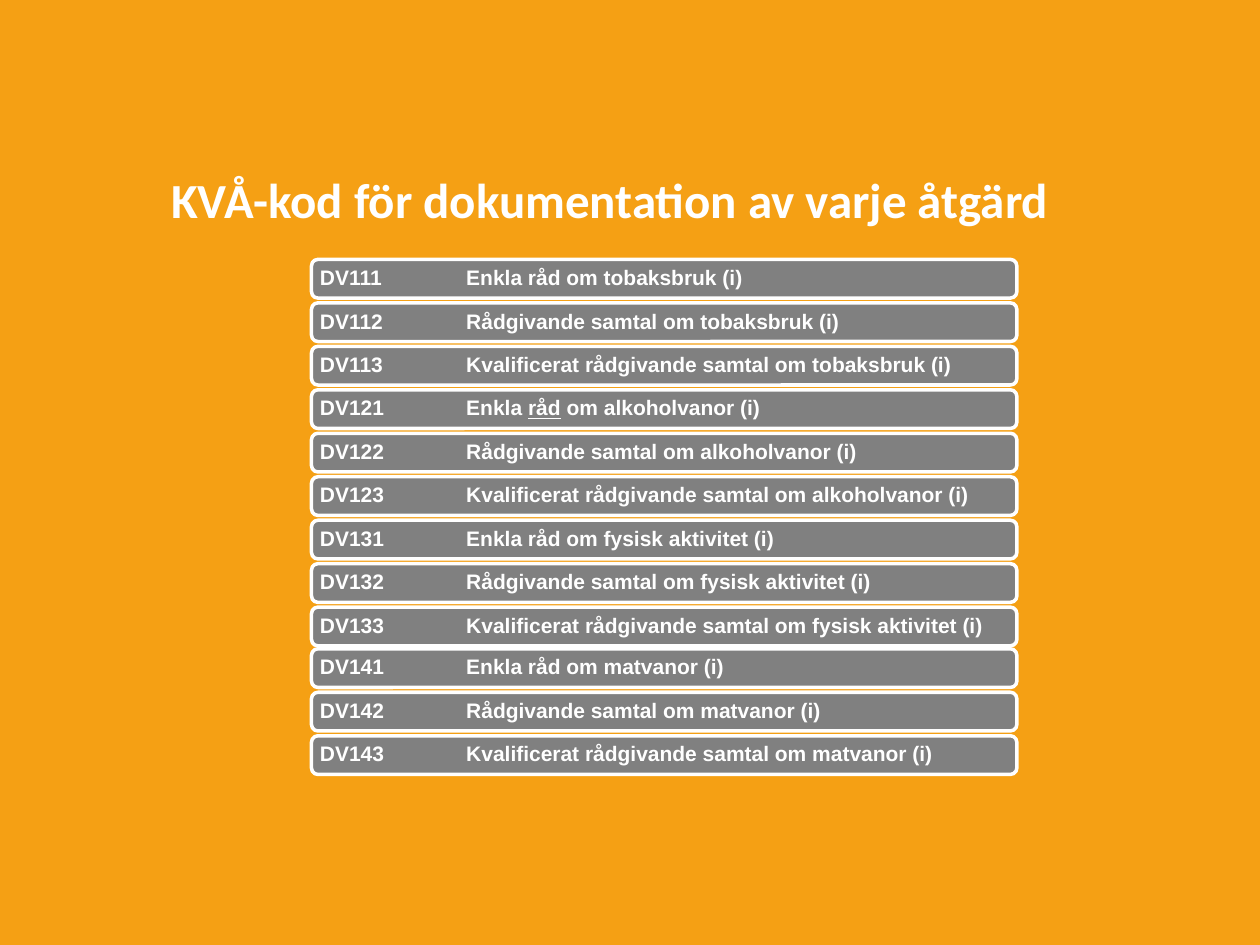
from dataclasses import dataclass

from lxml import etree
from pptx import Presentation
from pptx.dml.color import RGBColor
from pptx.enum.shapes import MSO_SHAPE
from pptx.enum.text import MSO_ANCHOR
from pptx.oxml.ns import qn
from pptx.util import Cm, Pt

ROUNDED = MSO_SHAPE.ROUNDED_RECTANGLE
MIDDLE = MSO_ANCHOR.MIDDLE

ORANGE, GREY, WHITE = "F5A014", "808080", "FFFFFF"

# Bar geometry in centimetres
BAR_LEFT, BAR_WIDTH, BAR_HEIGHT = 6.28, 14.22, 0.78
BAR_INSET = 0.04
TEXT_MARGIN = 0.13
TEXT_TAB = 2.95
FIRST_TOP, FOOD_TOP = 5.23, 13.08
BAR_PITCH = 7.01 / 8


@dataclass(frozen=True)
class Measure:
    code: str
    label: str
    underlined: str = ""


MEASURES = [
    Measure("DV111", "Enkla råd om tobaksbruk (i)"),
    Measure("DV112", "Rådgivande samtal om tobaksbruk (i)"),
    Measure("DV113", "Kvalificerat rådgivande samtal om tobaksbruk (i)"),
    Measure("DV121", "Enkla råd om alkoholvanor (i)", "råd"),
    Measure("DV122", "Rådgivande samtal om alkoholvanor (i)"),
    Measure("DV123", "Kvalificerat rådgivande samtal om alkoholvanor (i)"),
    Measure("DV131", "Enkla råd om fysisk aktivitet (i)"),
    Measure("DV132", "Rådgivande samtal om fysisk aktivitet (i)"),
    Measure("DV133", "Kvalificerat rådgivande samtal om fysisk aktivitet (i)"),
]
FOOD_MEASURES = [
    Measure("DV141", "Enkla råd om matvanor (i)"),
    Measure("DV142", "Rådgivande samtal om matvanor (i)"),
    Measure("DV143", "Kvalificerat rådgivande samtal om matvanor (i)"),
]


def paint(color_format, color: str) -> None:
    color_format.rgb = RGBColor.from_string(color)


def set_font(paragraph, name: str, size: int) -> None:
    paragraph.font.name = name
    paragraph.font.size = Pt(size)
    paragraph.font.bold = True
    paint(paragraph.font.color, WHITE)


def add_tab_stop(paragraph, position: float) -> None:
    tabs = etree.SubElement(paragraph._p.get_or_add_pPr(), qn("a:tabLst"))
    etree.SubElement(tabs, qn("a:tab"), pos=str(Cm(position)), algn="l")


def add_title(page, text: str) -> None:
    box = page.shapes.add_textbox(Cm(3.2), Cm(3.3), Cm(20.37), Cm(1.37))
    box.text_frame.word_wrap = True
    paragraph = box.text_frame.paragraphs[0]
    paragraph.text = text
    set_font(paragraph, "Calibri", 28)


def add_bar(group, measure: Measure, top: float) -> None:
    # Rounded background
    bar = group.shapes.add_shape(
        ROUNDED, Cm(BAR_LEFT), Cm(top), Cm(BAR_WIDTH), Cm(BAR_HEIGHT))
    bar.shadow.inherit = False
    bar.fill.solid()
    paint(bar.fill.fore_color, GREY)
    paint(bar.line.color, WHITE)
    bar.line.width = Pt(2)

    # Code and label
    box = group.shapes.add_textbox(
        Cm(BAR_LEFT + BAR_INSET), Cm(top + BAR_INSET),
        Cm(BAR_WIDTH - 2 * BAR_INSET), Cm(BAR_HEIGHT - 2 * BAR_INSET))
    frame = box.text_frame
    frame.word_wrap = True
    frame.vertical_anchor = MIDDLE
    frame.margin_left = frame.margin_right = Cm(TEXT_MARGIN)
    frame.margin_top = frame.margin_bottom = Cm(TEXT_MARGIN)
    paragraph = frame.paragraphs[0]
    paragraph.line_spacing = 0.9
    add_tab_stop(paragraph, TEXT_TAB)
    set_font(paragraph, "Arial", 12)

    text = f"{measure.code}\t{measure.label}"
    if not measure.underlined:
        paragraph.add_run().text = text
        return
    before, marked, after = text.partition(measure.underlined)
    for part in (before, marked, after):
        span = paragraph.add_run()
        span.text = part
        if part == marked:
            span.font.underline = True


def add_bars(group, measures: list[Measure], first_top: float) -> None:
    for row, measure in enumerate(measures):
        add_bar(group, measure, first_top + row * BAR_PITCH)


def main() -> None:
    deck = Presentation()
    deck.slide_width, deck.slide_height = Cm(25.4), Cm(19.05)
    page = deck.slides.add_slide(deck.slide_layouts[6])
    page.background.fill.solid()
    paint(page.background.fill.fore_color, ORANGE)

    add_title(page, "KVÅ-kod för dokumentation av varje åtgärd")

    # List of codes; the food habits sit slightly closer to the rest
    group = page.shapes.add_group_shape()
    add_bars(group, MEASURES, FIRST_TOP)
    add_bars(group, FOOD_MEASURES, FOOD_TOP)

    deck.save("out.pptx")


if __name__ == "__main__":
    main()
